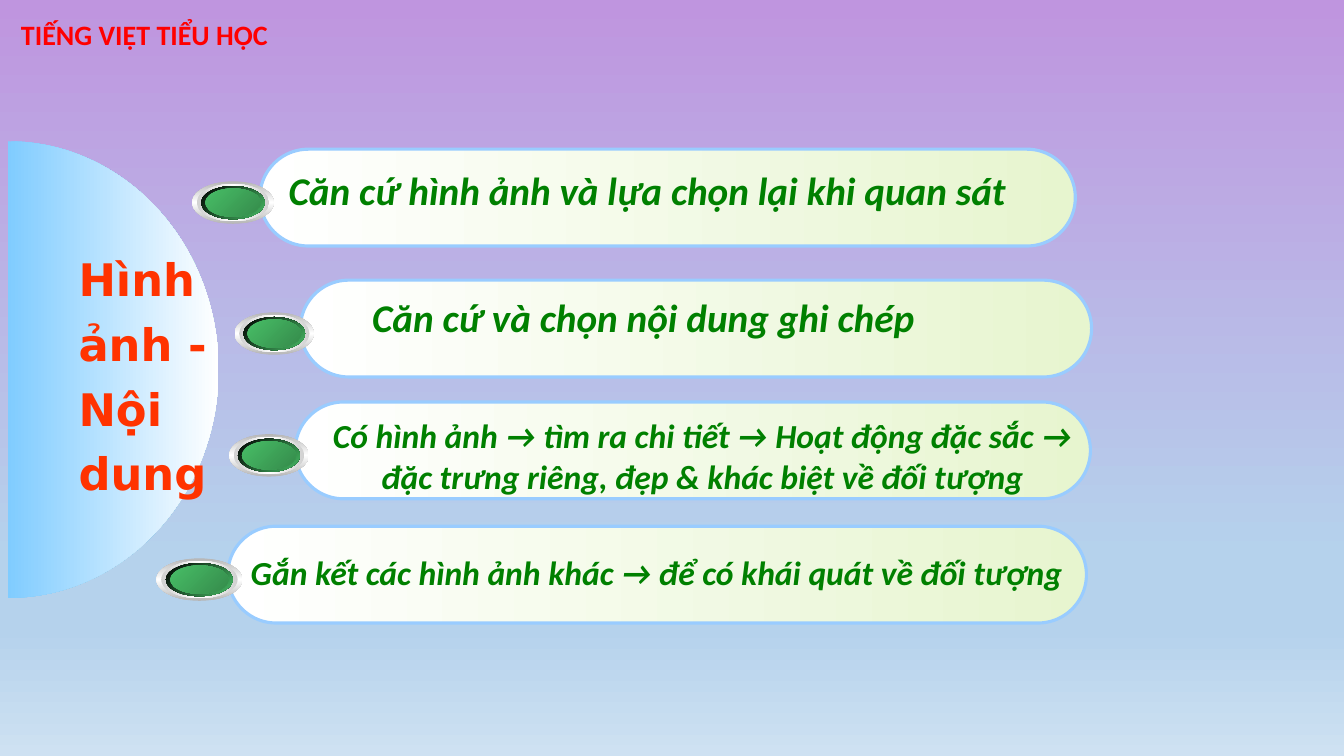
from math import cos, pi, sin

from lxml.etree import SubElement
from pptx import Presentation
from pptx.dml.color import RGBColor as RGB
from pptx.enum.shapes import MSO_SHAPE as SHAPE
from pptx.enum.text import MSO_ANCHOR as ANCHOR, PP_ALIGN as ALIGN
from pptx.oxml.ns import qn
from pptx.util import Cm, Pt

WHITE = RGB(0xFF, 0xFF, 0xFF)
BLACK = RGB(0x00, 0x00, 0x00)
RED = RGB(0xFF, 0x00, 0x00)
ORANGE = RGB(0xFF, 0x33, 0x00)
TEXT_GREEN = RGB(0x00, 0x80, 0x00)
BEAD_GREEN = RGB(0x48, 0xBE, 0x67)
DARK_GREEN = RGB(0x35, 0x8B, 0x4B)
PALE_GREEN = RGB(0xE7, 0xF5, 0xCF)
GREY = RGB(0xB6, 0xB6, 0xB6)
LIGHT_GREY = RGB(0xD1, 0xD1, 0xD1)
SKY = RGB(0x80, 0xCC, 0xFF)
OUTLINE = RGB(0x99, 0xCC, 0xFF)
PURPLE = RGB(0xBF, 0x95, 0xDF)
BLUE = RGB(0xB5, 0xD2, 0xEC)
PALE_BLUE = RGB(0xCE, 0xE1, 0xF2)

BACKGROUND = [(0, PURPLE), (74, BLUE), (83, BLUE), (100, PALE_BLUE)]
PILL = [(0, WHITE), (100, PALE_GREEN)]
DISC = [(0, SKY), (100, WHITE)]
BEAD_LAYERS = [
    (1, 1, [(0, GREY), (50, WHITE), (100, GREY)], 90),
    (0.89, 0.88, [(0, LIGHT_GREY), (50, WHITE), (100, LIGHT_GREY)], 0),
    (0.78, 0.78, [(0, BLACK), (100, BEAD_GREEN)], 45),
    (0.68, 0.67, [(0, BEAD_GREEN), (100, DARK_GREEN)], 45),
]
PILL_HEIGHT = 2.44
ROWS = [
    (6.55, 3.76, 20.55, "Căn cứ hình ảnh và lựa chọn lại khi quan sát", 28,
     (-0.73, 0.3, 20.98, 1.45)),
    (7.57, 7.06, 19.94, "Căn cứ và chọn nội dung ghi chép", 28,
     (-0.43, 0.2, 18.14, 1.45)),
    (7.44, 10.13, 20.04,
     "Có hình ảnh → tìm ra chi tiết → Hoạt động đặc sắc → "
     "đặc trưng riêng, đẹp & khác biệt về đối tượng", 24,
     (0.56, 0.21, 19.41, 2.31)),
    (5.74, 13.26, 21.64,
     "Gắn kết các hình ảnh khác → để có khái quát về đối tượng", 24,
     (0.23, 0.53, 21.16, 1.27)),
]


def set_gradient(fill, element, stops, angle):
    fill.gradient()
    gs_list = element.find(".//" + qn("a:gsLst"))
    for gs in list(gs_list):
        gs_list.remove(gs)
    for position, color in stops:
        gs = SubElement(gs_list, qn("a:gs"), pos=str(position * 1000))
        SubElement(gs, qn("a:srgbClr"), val=str(color))
    element.find(".//" + qn("a:lin")).set("ang", str(angle * 60000))


def style_shape(sp, stops, angle, line=None):
    sp.shadow.inherit = False
    set_gradient(sp.fill, sp.element, stops, angle)
    if line is None:
        sp.line.fill.background()
    else:
        sp.line.color.rgb = line
        sp.line.width = Pt(2.25)


def add_text(s, lines, box, size, color, font="Calibri", italic=False,
             align=ALIGN.LEFT, anchor=ANCHOR.TOP, spacing=None, wrap=True):
    tf = s.shapes.add_textbox(*map(Cm, box)).text_frame
    tf.word_wrap = wrap
    tf.vertical_anchor = anchor
    for i, line in enumerate(lines):
        p = tf.paragraphs[0] if i == 0 else tf.add_paragraph()
        p.alignment = align
        p.line_spacing = spacing
        r = p.add_run()
        r.text = line
        r.font.name = font
        r.font.size = Pt(size)
        r.font.bold = True
        r.font.italic = italic
        r.font.color.rgb = color


def add_disc(s, left, top, width, height):
    angles = [pi * i / 90 - pi / 2 for i in range(91)]
    points = [(Cm(left + width * cos(a)), Cm(top + height / 2 * (1 + sin(a))))
              for a in angles]
    outline = s.shapes.build_freeform(*points[0])
    outline.add_line_segments(points[1:], close=True)
    style_shape(outline.convert_to_shape(), DISC, 0)
    add_text(s, ["Hình", "ảnh -", "Nội", "dung"],
             (left + 1.53, top + 2.49, 3.8, 6.55), 32, ORANGE,
             font="DejaVu Sans", anchor=ANCHOR.MIDDLE, spacing=Pt(46.4),
             wrap=False)


def add_bead(group, left, top, width, height):
    for w_ratio, h_ratio, stops, angle in BEAD_LAYERS:
        w, h = width * w_ratio, height * h_ratio
        sp = group.shapes.add_shape(
            SHAPE.OVAL, Cm(left + (width - w) / 2),
            Cm(top + (height - h) / 2), Cm(w), Cm(h))
        style_shape(sp, stops, angle)


def add_row(s, left, top, width, text, size, text_box):
    group = s.shapes.add_group_shape()
    pill = group.shapes.add_shape(SHAPE.ROUNDED_RECTANGLE, Cm(left), Cm(top),
                                  Cm(width), Cm(PILL_HEIGHT))
    pill.adjustments[0] = 0.5
    style_shape(pill, PILL, 0, line=OUTLINE)
    add_bead(group, left - 0.083 * width, top + 0.81, 0.1 * width, 1.07)
    dx, dy, w, h = text_box
    add_text(s, [text], (left + dx, top + dy, w, h), size, TEXT_GREEN,
             italic=True, align=ALIGN.CENTER)


def main():
    prs = Presentation()
    prs.slide_width, prs.slide_height = Cm(33.87), Cm(19.05)
    s = prs.slides.add_slide(prs.slide_layouts[6])
    set_gradient(s.background.fill, s.element, BACKGROUND, 90)
    add_disc(s, 0.2, 3.56, 5.31, 11.51)
    for row in ROWS:
        add_row(s, *row)
    add_text(s, ["TIẾNG VIỆT TIỂU HỌC"], (0.28, 0.38, 7.11, 1.09), 20, RED,
             anchor=ANCHOR.MIDDLE, spacing=0.9)
    prs.save("out.pptx")


if __name__ == "__main__":
    main()
